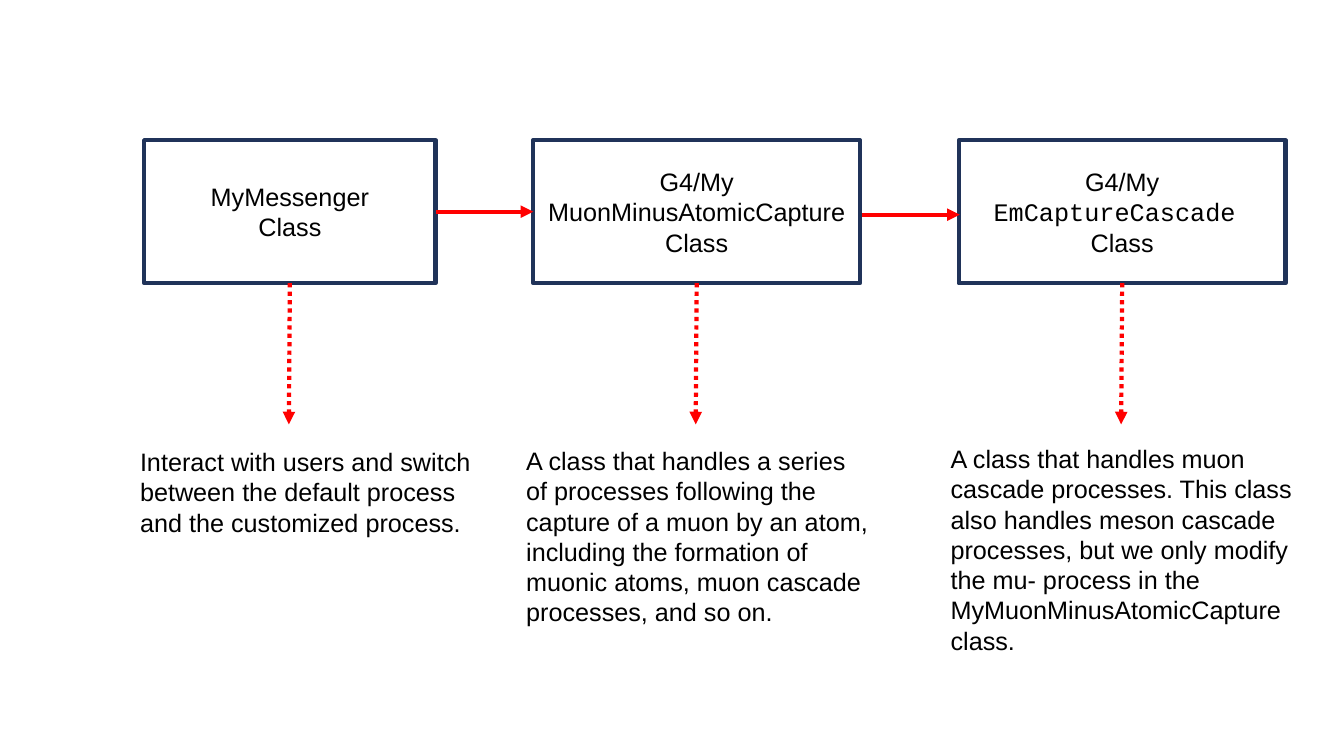
from pptx import Presentation
from pptx.dml.color import RGBColor
from pptx.enum.dml import MSO_LINE_DASH_STYLE as Dash
from pptx.enum.shapes import MSO_CONNECTOR as Connector, MSO_SHAPE as Shape
from pptx.enum.text import MSO_ANCHOR as Anchor, PP_ALIGN as Align
from pptx.oxml.ns import qn
from pptx.util import Inches, Pt
from lxml.etree import SubElement

NAVY = RGBColor(0x20, 0x33, 0x59)
RED = RGBColor(0xFF, 0x00, 0x00)
BLACK = RGBColor(0x00, 0x00, 0x00)

# Shared rows of the diagram, in inches
BOX_TOP, BOX_HEIGHT = 1.39, 1.42
BOX_BOTTOM = BOX_TOP + BOX_HEIGHT
DROP_END = 4.21
CODE_NAME = "EmCaptureCascade"

# Box left and width, title paragraphs, note left, top, width and height, note
COLUMNS = [
    (1.43, 2.89, ["MyMessenger\vClass"], (1.29, 4.38, 3.59, 1.01),
     "Interact with users and switch between the default process and the "
     "customized process."),
    (5.29, 3.24, ["G4/My", "MuonMinusAtomicCapture\vClass"], (5.12, 4.37, 3.59, 1.92),
     "A class that handles a series of processes following the capture of a "
     "muon by an atom, including the formation of muonic atoms, muon cascade "
     "processes, and so on."),
    (9.51, 3.24, ["G4/My", CODE_NAME + " \vClass"], (9.33, 4.35, 3.8, 2.22),
     "A class that handles muon cascade processes. This class also handles "
     "meson cascade processes, but we only modify the mu- process in the "
     "MyMuonMinusAtomicCapture class."),
]
# Left end and height of the arrows between boxes
LINKS = [(4.32, 2.1), (8.55, 2.13)]
LINK_LENGTH = 0.97


def style_text(para):
    para.font.name = "Arial"
    para.font.size = Pt(18)
    para.font.color.rgb = BLACK


def add_arrow(page, start, end, dash=None):
    arrow = page.shapes.add_connector(
        Connector.STRAIGHT, *(Inches(value) for value in start + end))
    arrow.line.color.rgb = RED
    arrow.line.width = Pt(3)
    if dash:
        arrow.line.dash_style = dash
    SubElement(arrow.line._get_or_add_ln(), qn("a:tailEnd"), type="triangle")
    SubElement(arrow._element.spPr, qn("a:effectLst"))


deck = Presentation()
deck.slide_width, deck.slide_height = Inches(13.33), Inches(7.5)
page = deck.slides.add_slide(deck.slide_layouts[6])

for left, width, title, note_place, note in COLUMNS:
    # Class box
    box = page.shapes.add_shape(
        Shape.RECTANGLE, Inches(left), Inches(BOX_TOP), Inches(width), Inches(BOX_HEIGHT))
    box.shadow.inherit = False
    box.fill.background()
    box.line.color.rgb = NAVY
    box.line.width = Pt(3)
    frame = box.text_frame
    frame.word_wrap = True
    frame.vertical_anchor = Anchor.MIDDLE
    frame.text = "\n".join(title)
    for para in frame.paragraphs:
        para.alignment = Align.CENTER
        style_text(para)
        for span in para.runs:
            if span.text.startswith(CODE_NAME):
                span.font.name = "Courier New"

    # Dotted arrow down to the note
    middle = left + width / 2
    add_arrow(page, (middle, BOX_BOTTOM), (middle - 0.01, DROP_END), Dash.ROUND_DOT)

    # Note
    note_box = page.shapes.add_textbox(*(Inches(value) for value in note_place))
    note_box.text_frame.word_wrap = True
    note_box.text_frame.text = note
    style_text(note_box.text_frame.paragraphs[0])

# Arrows between the boxes
for left, height in LINKS:
    add_arrow(page, (left, height), (left + LINK_LENGTH, height))

deck.save("out.pptx")
